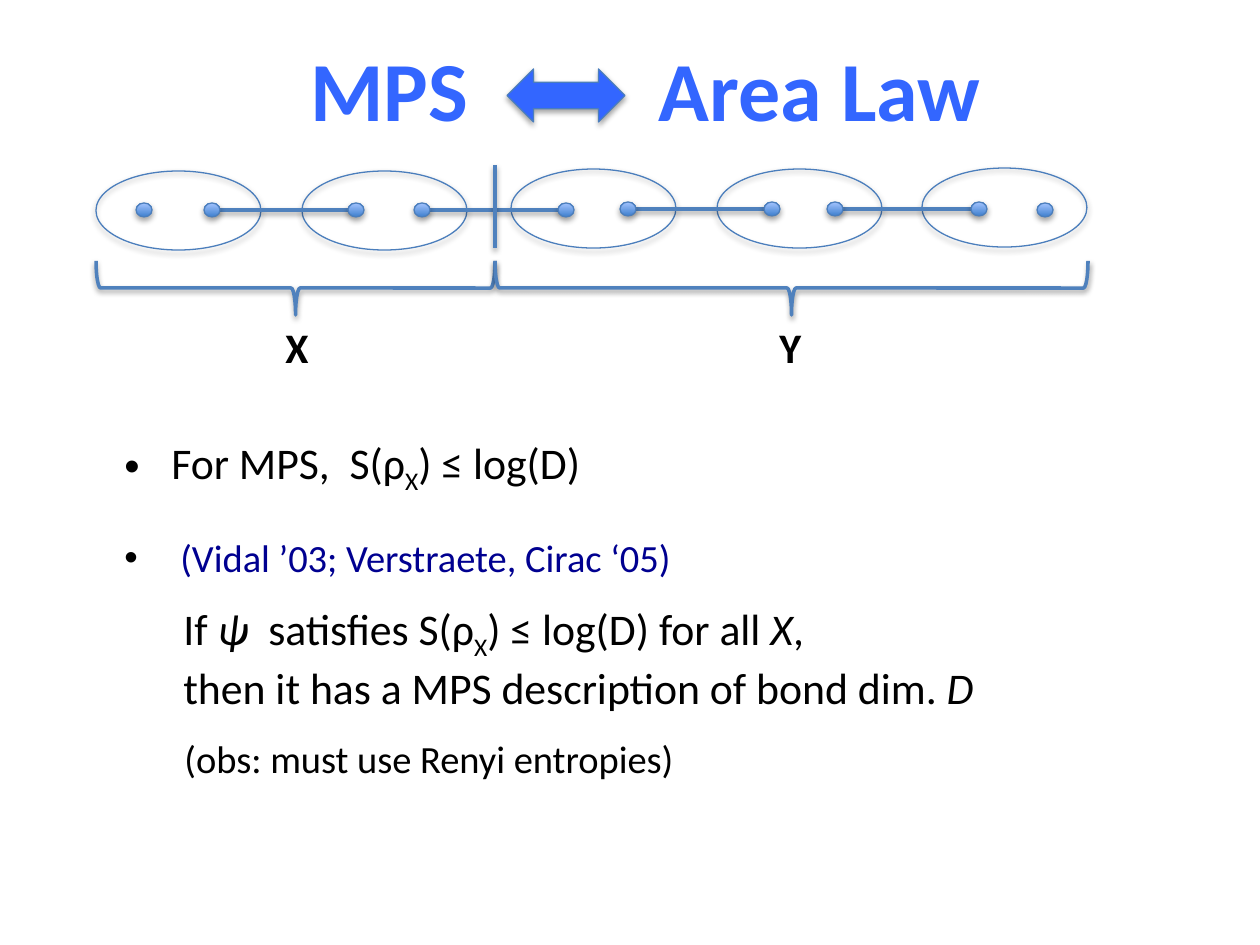
from dataclasses import dataclass

from lxml.etree import SubElement
from pptx import Presentation
from pptx.dml.color import RGBColor
from pptx.enum.shapes import MSO_CONNECTOR as Connector, MSO_SHAPE as Shape
from pptx.enum.text import MSO_ANCHOR as Anchor, MSO_AUTO_SIZE as AutoSize, PP_ALIGN as Align
from pptx.oxml.ns import qn
from pptx.util import Emu, Pt

EMU_PER_PX = 914400 / 126

FONT = "Calibri"
BLACK = RGBColor(0x00, 0x00, 0x00)
TITLE_BLUE = RGBColor(0x33, 0x66, 0xFF)
CITATION_BLUE = RGBColor(0x00, 0x00, 0x90)
OUTLINE_BLUE = RGBColor(0x4B, 0x7E, 0xBC)
BOND_BLUE = RGBColor(0x4F, 0x81, 0xBD)
DOT_DARK = RGBColor(0x3F, 0x80, 0xCE)
DOT_LIGHT = RGBColor(0xA4, 0xC4, 0xFF)

SITE_WIDTH, SITE_HEIGHT = 165, 79
DOT_WIDTH, DOT_HEIGHT = 16, 14
BOND_LENGTH = 144
CUT_X = 495
BRACE_TOP, BRACE_DEPTH = 261, 54


@dataclass(frozen=True)
class Point:
    x: int
    y: int


@dataclass(frozen=True)
class Part:
    label: str
    left: int
    right: int
    label_left: int


@dataclass(frozen=True)
class Span:
    text: str
    italic: bool = False
    subscript: bool = False
    spacing: int = 0  # extra points after each letter


@dataclass(frozen=True)
class Line:
    spans: tuple[Span, ...]
    size: int
    indent: int
    color: RGBColor = BLACK
    bullet: bool = False
    space_before: int = 0
    bold: bool = False
    align: Align = Align.LEFT


SITES = [Point(96, 171), Point(302, 171), Point(511, 169), Point(717, 169), Point(922, 168)]
BONDS = [Point(212, 210), Point(422, 210), Point(628, 209), Point(835, 209)]
END_DOTS = [Point(144, 210), Point(1045, 210)]
PARTS = [Part("X", 96, CUT_X, 273), Part("Y", CUT_X, 1088, 767)]

# The wide space leaves room for the double arrow
TITLE = [Line((Span("MPS"), Span(" ", spacing=98), Span("Area Law")),
              48, 0, TITLE_BLUE, bold=True, align=Align.CENTER)]
BOUND = [Line((Span("For MPS,  S(ρ"), Span("X", subscript=True), Span(") ≤ log(D)")),
              25, 47, bullet=True)]
CONVERSE = [
    Line((Span("(Vidal ’03; Verstraete, Cirac ‘05)"),), 22, 56, CITATION_BLUE, bullet=True),
    Line((Span("If "), Span("ψ", italic=True), Span("  satisfies S(ρ"),
          Span("X", subscript=True), Span(") ≤ log(D) for all "),
          Span("X", italic=True), Span(",")), 25, 59, space_before=12),
    Line((Span("then it has a MPS description of bond dim. "), Span("D", italic=True)), 25, 59),
    Line((Span("(obs: must use Renyi entropies)"),), 22, 60, space_before=12),
]


def px(length: float) -> Emu:
    return Emu(round(length * EMU_PER_PX))


def add_shadow(item, opacity: int, distance: int) -> None:
    effects = SubElement(item._element.spPr, qn("a:effectLst"))
    shadow = SubElement(effects, qn("a:outerShdw"), blurRad="40000", dist=str(distance),
                        dir="5400000", rotWithShape="0")
    color = SubElement(shadow, qn("a:srgbClr"), val="000000")
    SubElement(color, qn("a:alpha"), val=str(opacity * 1000))


def add_outlined(page, kind: Shape, left: float, top: float, width: int, height: int):
    """Unfilled shape with a thin outline and a soft shadow."""
    shape = page.shapes.add_shape(kind, px(left), px(top), px(width), px(height))
    shape.fill.background()
    shape.line.color.rgb = OUTLINE_BLUE
    shape.line.width = Pt(0.75)
    add_shadow(shape, 35, 23000)
    return shape


def add_dot(page, center: Point) -> None:
    dot = add_outlined(page, Shape.OVAL, center.x - DOT_WIDTH // 2,
                       center.y - DOT_HEIGHT // 2, DOT_WIDTH, DOT_HEIGHT)
    dot.fill.gradient()
    dot.fill.gradient_angle = 90
    for stop, color in zip(dot.fill.gradient_stops, (DOT_DARK, DOT_LIGHT)):
        stop.color.rgb = color


def add_line(page, start: Point, end: Point) -> None:
    line = page.shapes.add_connector(Connector.STRAIGHT, px(start.x), px(start.y),
                                     px(end.x), px(end.y))
    line.line.color.rgb = BOND_BLUE
    line.line.width = Pt(2)
    add_shadow(line, 38, 20000)


def add_bond(page, start: Point) -> None:
    end = Point(start.x + BOND_LENGTH, start.y)
    add_line(page, start, end)
    add_dot(page, start)
    add_dot(page, end)


def add_brace(page, part: Part) -> None:
    span = part.right - part.left
    left = (part.left + part.right - BRACE_DEPTH) / 2
    top = BRACE_TOP + (BRACE_DEPTH - span) / 2
    brace = page.shapes.add_shape(Shape.RIGHT_BRACE, px(left), px(top),
                                  px(BRACE_DEPTH), px(span))
    brace.rotation = 90
    brace.fill.background()
    brace.line.color.rgb = BOND_BLUE
    brace.line.width = Pt(2)
    add_shadow(brace, 38, 20000)


def write_line(para, line: Line) -> None:
    properties = para._p.get_or_add_pPr()
    properties.set("marL", str(px(line.indent)))
    properties.set("indent", str(px(-line.indent if line.bullet else 0)))
    if line.bullet:
        bullet_color = SubElement(properties, qn("a:buClr"))
        SubElement(bullet_color, qn("a:srgbClr"), val=str(BLACK))
        SubElement(properties, qn("a:buFont"), typeface="Arial")
        SubElement(properties, qn("a:buChar"), char="•")
    para.alignment = line.align
    para.space_before = Pt(line.space_before)
    para.font.name = FONT
    para.font.size = Pt(line.size)
    para.font.bold = line.bold
    para.font.color.rgb = line.color
    for span in line.spans:
        run = para.add_run()
        run.text = span.text
        if span.italic:
            run.font.italic = True
        if span.subscript:
            run._r.get_or_add_rPr().set("baseline", "-25000")
        if span.spacing:
            run._r.get_or_add_rPr().set("spc", str(span.spacing * 100))


def add_text(page, left: int, top: int, width: int, height: int, lines: list[Line]):
    box = page.shapes.add_textbox(px(left), px(top), px(width), px(height))
    frame = box.text_frame
    frame.word_wrap = True
    frame.auto_size = AutoSize.SHAPE_TO_FIT_TEXT
    for index, line in enumerate(lines):
        write_line(frame.add_paragraph() if index else frame.paragraphs[0], line)
    return box


def main() -> None:
    deck = Presentation()
    deck.slide_width, deck.slide_height = px(1260), px(945)
    page = deck.slides.add_slide(deck.slide_layouts[6])

    # Title with the double arrow in its gap
    title = add_text(page, 21, -33, 1249, 241, TITLE).text_frame
    title.auto_size = AutoSize.NONE
    title.vertical_anchor = Anchor.MIDDLE
    arrow = add_outlined(page, Shape.LEFT_RIGHT_ARROW, 507, 69, 118, 53)
    arrow.fill.solid()
    arrow.fill.fore_color.rgb = TITLE_BLUE

    # Chain of sites, bonds and the cut
    for site in SITES:
        add_outlined(page, Shape.OVAL, site.x, site.y, SITE_WIDTH, SITE_HEIGHT)
    for bond in BONDS:
        add_bond(page, bond)
    for dot in END_DOTS:
        add_dot(page, dot)
    add_line(page, Point(CUT_X, 165), Point(CUT_X, 248))

    # The two parts of the chain
    for part in PARTS:
        add_brace(page, part)
        add_text(page, part.label_left, 315, 59, 63,
                 [Line((Span(part.label),), 24, 0, bold=True)])

    # Statements
    add_text(page, 112, 528, 1022, 348, CONVERSE)
    add_text(page, 112, 430, 714, 66, BOUND)

    deck.save("out.pptx")


if __name__ == "__main__":
    main()
